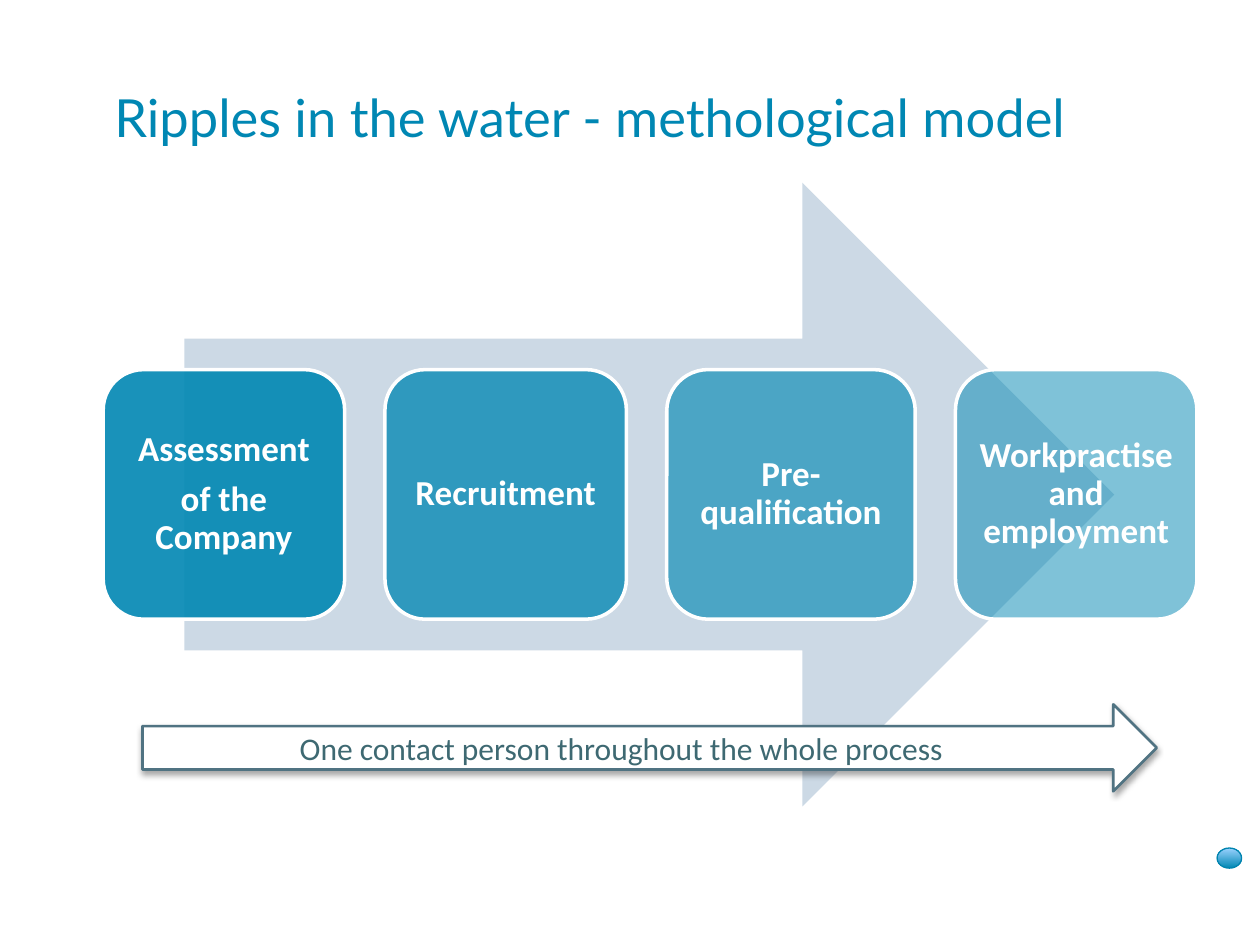
import pptx
import pptx.util
import pptx.dml.color
import pptx.enum.shapes
import pptx.enum.text
import pptx.oxml
import pptx.oxml.ns
from lxml import etree

Pt = pptx.util.Pt
RGB = pptx.dml.color.RGBColor
SHAPE = pptx.enum.shapes.MSO_SHAPE
ALIGN = pptx.enum.text.PP_ALIGN
ANCHOR = pptx.enum.text.MSO_ANCHOR
qn = pptx.oxml.ns.qn

BLUE = RGB(0x00, 0x87, 0xB3)
LIGHT_BLUE = RGB(0x9B, 0xD2, 0xFF)
RIM_BLUE = RGB(0x00, 0x84, 0xAF)
PALE = RGB(0xCC, 0xD9, 0xE5)
WHITE = RGB(0xFF, 0xFF, 0xFF)
SLATE = RGB(0x50, 0x73, 0x82)
TEAL = RGB(0x3E, 0x69, 0x72)

SHADOW = """<a:effectLst xmlns:a="http://schemas.openxmlformats.org/drawingml/2006/main">
<a:outerShdw blurRad="%d" dist="%d" dir="5400000" rotWithShape="0">
<a:srgbClr val="000000"><a:alpha val="35000"/></a:srgbClr>
</a:outerShdw></a:effectLst>"""


class SlideBuilder:
    """Holds the text style and the current slide."""

    def __init__(self, s, font):
        self.s = s
        self.font = font

    def shape(self, kind, box, fill=None, line=None, weight=1, alpha=None):
        sp = self.s.shapes.add_shape(kind, *map(Pt, box))
        sp.shadow.inherit = False
        if fill is not None:
            sp.fill.solid()
            sp.fill.fore_color.rgb = fill
        if alpha is not None:
            clr = sp.fill._xPr.find(qn("a:solidFill"))[0]
            etree.SubElement(clr, qn("a:alpha")).set("val", str(alpha * 1000))
        if line is None:
            sp.line.fill.background()
        else:
            sp.line.color.rgb = line
            sp.line.width = Pt(weight)
        return sp

    def gradient_dot(self, box, bottom, top, line):
        sp = self.shape(SHAPE.OVAL, box, line=line, weight=0.75)
        sp.fill.gradient()
        sp.fill.gradient_angle = 90
        for stop, color in zip(sp.fill.gradient_stops, (bottom, top)):
            stop.color.rgb = color

    def shadow(self, sp, blur, dist):
        spPr = sp._element.spPr
        xml = SHADOW % (Pt(blur), Pt(dist))
        spPr.replace(spPr.find(qn("a:effectLst")), etree.fromstring(xml))

    def format(self, p, size, color, bold=False, font=None):
        for r in p.runs:
            r.font.name = font or self.font
            r.font.size = Pt(size)
            r.font.bold = bold
            r.font.color.rgb = color

    def text(self, text, box, size, color, font=None, anchor=ANCHOR.TOP):
        tf = self.s.shapes.add_textbox(*map(Pt, box)).text_frame
        tf.word_wrap = True
        tf.vertical_anchor = anchor
        tf.text = text
        self.format(tf.paragraphs[0], size, color, font=font)

    def step(self, text, box, alpha):
        sp = self.shape(SHAPE.ROUNDED_RECTANGLE, box, BLUE, WHITE, 2, alpha)
        tf = sp.text_frame
        tf.word_wrap = True
        tf.vertical_anchor = ANCHOR.MIDDLE
        tf.margin_left = tf.margin_right = Pt(6)
        tf.margin_top = tf.margin_bottom = Pt(6)
        tf.text = text
        for p in tf.paragraphs:
            p.alignment = ALIGN.CENTER
            p.line_spacing = 0.9
            p.space_after = Pt(7)
            self.format(p, 20, WHITE, bold=True)


def main():
    prs = pptx.Presentation()
    prs.slide_width, prs.slide_height = Pt(720), Pt(540)
    b = SlideBuilder(prs.slides.add_slide(prs.slide_layouts[6]), "Calibri")

    # Corner dot and title
    b.gradient_dot((695.5, 484.6, 14, 11.5), BLUE, LIGHT_BLUE, RIM_BLUE)
    b.text("Ripples in the water - methological model", (58.3, 21.6, 626, 90),
           30, BLUE, font="Lato", anchor=ANCHOR.MIDDLE)

    # Process steps on the large arrow
    b.shape(SHAPE.RIGHT_ARROW, (105.3, 104.4, 531.4, 356.4), PALE)
    steps = [
        ("Assessment\nof the Company", 138, 90),
        ("Recruitment", 138, 77),
        ("Pre-qualification", 142, 63),
        ("Workpractise and employment", 138, 50),
    ]
    x, gap = 59, 23
    for text, width, alpha in steps:
        b.step(text, (x, 211.2, width, 142.6), alpha)
        x += width + gap

    # Contact arrow
    sp = b.shape(SHAPE.RIGHT_ARROW, (81.4, 402.5, 579.6, 49.7), WHITE, SLATE, 1.5)
    b.shadow(sp, 3.1, 1.8)
    b.text("One contact person throughout the whole process",
           (164.2, 413.3, 504, 29), 18, TEAL)

    prs.save("out.pptx")


if __name__ == "__main__":
    main()
